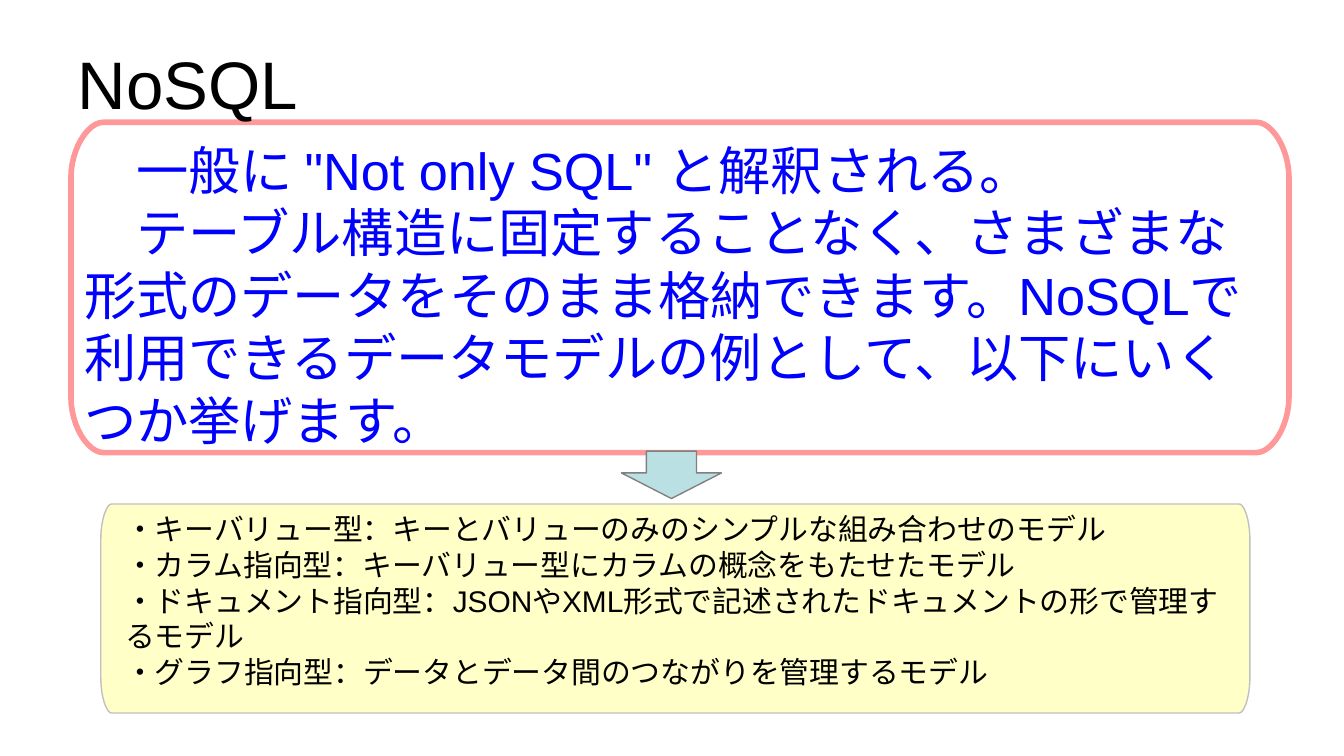
from pptx import Presentation
from pptx.dml.color import RGBColor
from pptx.enum.shapes import MSO_SHAPE
from pptx.enum.text import MSO_ANCHOR
from pptx.util import Pt

DOWN_ARROW = MSO_SHAPE.DOWN_ARROW
TOP = MSO_ANCHOR.TOP

BLACK = RGBColor(0x00, 0x00, 0x00)
BLUE = RGBColor(0x00, 0x00, 0xFF)
PINK = RGBColor(0xFF, 0x99, 0x99)
CREAM = RGBColor(0xFF, 0xFF, 0xC7)
SILVER = RGBColor(0xC0, 0xC0, 0xC0)
PALE_TEAL = RGBColor(0xBB, 0xE0, 0xE3)
GRAY = RGBColor(0x80, 0x80, 0x80)

FONT = "Arial"
CURVE_STEPS = 12

SUMMARY = [
    "　一般に \"Not only SQL\" と解釈される。",
    "　テーブル構造に固定することなく、さまざまな形式のデータをそのまま格納できます。"
    "NoSQLで利用できるデータモデルの例として、以下にいくつか挙げます。",
]
DATA_MODELS = [
    "・キーバリュー型：キーとバリューのみのシンプルな組み合わせのモデル",
    "・カラム指向型：キーバリュー型にカラムの概念をもたせたモデル",
    "・ドキュメント指向型：JSONやXML形式で記述されたドキュメントの形で管理するモデル",
    "・グラフ指向型：データとデータ間のつながりを管理するモデル",
]


def style_shape(shape, fill, line, line_width):
    shape.shadow.inherit = False
    if fill is None:
        shape.fill.background()
    else:
        shape.fill.solid()
        shape.fill.fore_color.rgb = fill
    shape.line.color.rgb = line
    shape.line.width = Pt(line_width)


def corner_points(start, corner, end):
    first = [(a + b) / 2 for a, b in zip(start, corner)]
    second = [(a + b) / 2 for a, b in zip(corner, end)]
    points = []
    for step in range(CURVE_STEPS + 1):
        t = step / CURVE_STEPS
        weights = ((1 - t) ** 3, 3 * t * (1 - t) ** 2, 3 * t * t * (1 - t), t ** 3)
        controls = zip(start, first, second, end)
        points.append(tuple(
            Pt(sum(weight * value for weight, value in zip(weights, axis)))
            for axis in controls
        ))
    return points


def add_rounded_panel(slide, box, corner_width, fill, line, line_width):
    left, top, width, height = box
    right, bottom = left + width, top + height
    corner_height = height / 6
    points = []
    for x, y, inward_x, inward_y, starts_flat in (
        (left, top, 1, 1, True),
        (left, bottom, 1, -1, False),
        (right, bottom, -1, -1, True),
        (right, top, -1, 1, False),
    ):
        flat = (x + inward_x * corner_width, y)
        upright = (x, y + inward_y * corner_height)
        start, end = (flat, upright) if starts_flat else (upright, flat)
        points += corner_points(start, (x, y), end)
    builder = slide.shapes.build_freeform(*points[0])
    builder.add_line_segments(points[1:], close=True)
    style_shape(builder.convert_to_shape(), fill, line, line_width)


def add_text(slide, box, lines, size, color, line_spacing):
    shape = slide.shapes.add_textbox(*map(Pt, box))
    frame = shape.text_frame
    frame.word_wrap = True
    frame.vertical_anchor = TOP
    frame.text = "\n".join(lines)
    font_format = {"name": FONT, "size": Pt(size)}
    for paragraph in frame.paragraphs:
        paragraph.line_spacing = Pt(line_spacing)
        for run in paragraph.runs:
            for attribute, value in font_format.items():
                setattr(run.font, attribute, value)
            run.font.color.rgb = color


def add_down_arrow(slide, box):
    arrow = slide.shapes.add_shape(DOWN_ARROW, *map(Pt, box))
    arrow.adjustments[0] = 0.5
    arrow.adjustments[1] = 0.54
    style_shape(arrow, PALE_TEAL, GRAY, 0.75)


def main():
    presentation = Presentation()
    presentation.slide_width = Pt(720)
    presentation.slide_height = Pt(405)
    slide = presentation.slides.add_slide(presentation.slide_layouts[6])

    add_rounded_panel(slide, (38, 65.5, 652.5, 177), 17.5, None, PINK, 3)
    add_text(slide, (34.5, 18.7, 375, 48.3), ["NoSQL"], 36, BLACK, 43.5)
    add_text(slide, (38, 70.5, 652.5, 170.5), SUMMARY, 28, BLUE, 33.5)
    add_rounded_panel(slide, (54, 270, 615.6, 112), 5.8, CREAM, SILVER, 0.75)
    add_down_arrow(slide, (332.9, 241.7, 53.6, 25.4))
    add_text(slide, (60, 270, 607.7, 96.5), DATA_MODELS, 16, BLACK, 19.2)

    presentation.save("out.pptx")


if __name__ == "__main__":
    main()
